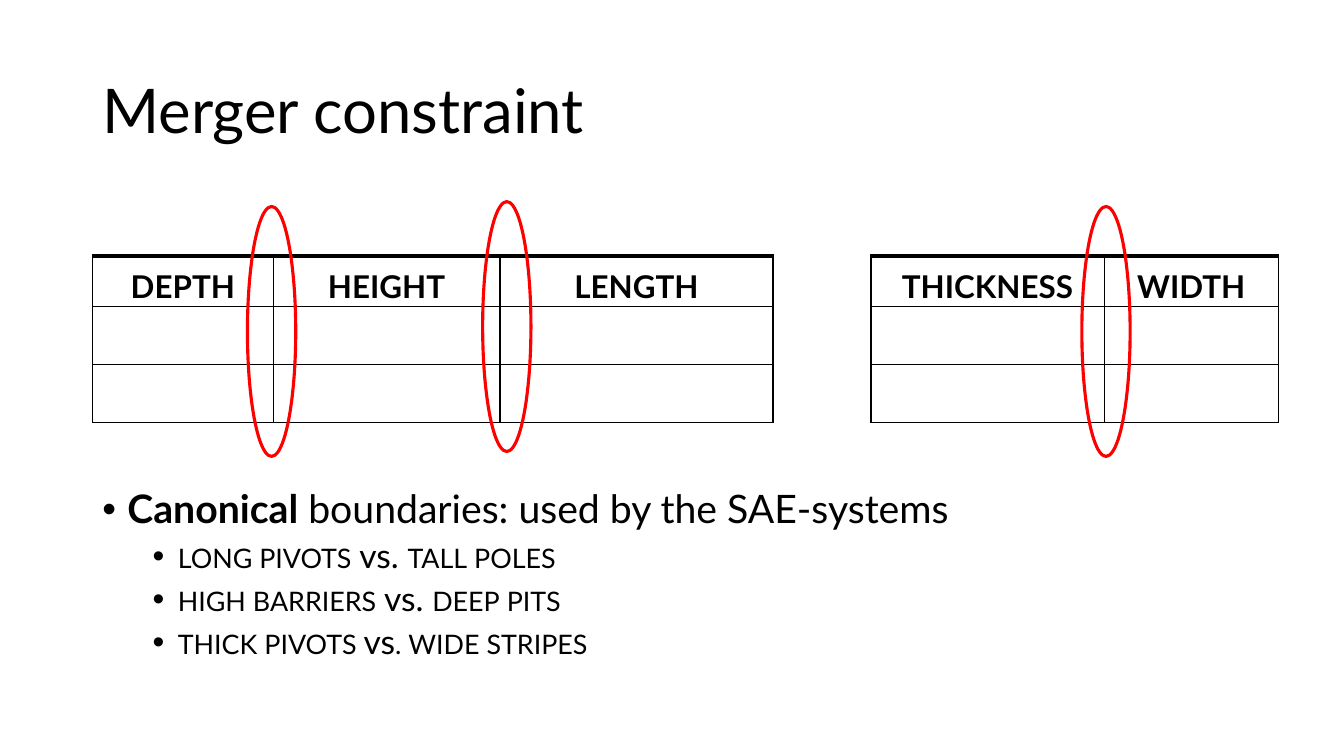
from lxml.etree import SubElement
from pptx import Presentation
from pptx.dml.color import RGBColor
from pptx.enum.shapes import MSO_SHAPE as Shape
from pptx.enum.text import MSO_ANCHOR as Anchor, PP_ALIGN as Align
from pptx.oxml import parse_xml
from pptx.oxml.ns import nsdecls, qn
from pptx.util import Pt

BLACK = RGBColor(0x00, 0x00, 0x00)
RED = RGBColor(0xFF, 0x00, 0x00)
FONT = "Lato"
RING_WIDTH, RING_HEIGHT = 34.5, 178.5
HEADER_HEIGHT, ROW_HEIGHT = 36, 41.4

# Each entry: level, then runs as (text, style)
BULLETS = [
    (0, [("Canonical", "bold"), (" boundaries: used by the SAE-systems", "")]),
    (1, [("long pivots", "small"), (" vs. ", ""), ("tall poles", "small")]),
    (1, [("high barriers", "small"), (" vs. ", ""), ("deep pits", "small")]),
    (1, [("thick pivots ", "small"), ("vs", ""), (". wide stripes", "small")]),
]


def set_font(paragraph, size):
    font = paragraph.font
    font.name, font.size = FONT, Pt(size)
    font.color.rgb = BLACK


def add_run(paragraph, text, style=""):
    run = paragraph.add_run()
    run.text = text
    if style == "bold":
        run.font.bold = True
    elif style == "small":
        run.font._element.set("cap", "small")


def add_text_frame(slide, left, top, width, height):
    box = slide.shapes.add_textbox(Pt(left), Pt(top), Pt(width), Pt(height))
    box.text_frame.word_wrap = True
    return box.text_frame


def add_title(slide, left, top, width, height):
    frame = add_text_frame(slide, left, top, width, height)
    frame.vertical_anchor = Anchor.MIDDLE
    paragraph = frame.paragraphs[0]
    paragraph.line_spacing = 0.9
    set_font(paragraph, 44)
    add_run(paragraph, "Merger constraint")


def set_borders(cell, top_width):
    properties = cell._tc.get_or_add_tcPr()
    widths = {"lnL": 1, "lnR": 1, "lnT": top_width, "lnB": 1}
    for position, (tag, width) in enumerate(widths.items()):
        properties.insert(position, parse_xml(
            f'<a:{tag} {nsdecls("a")} w="{Pt(width)}"><a:solidFill>'
            f'<a:srgbClr val="{BLACK}"/></a:solidFill></a:{tag}>'))


def add_dimension_table(slide, left, top, columns):
    """Place a header row of dimensions above two empty rows."""
    height = HEADER_HEIGHT + 2 * ROW_HEIGHT
    width = sum(columns.values())
    table = slide.shapes.add_table(
        3, len(columns), Pt(left), Pt(top), Pt(width), Pt(height)).table
    table.first_row = table.horz_banding = False
    for index, row in enumerate(table.rows):
        row.height = Pt(ROW_HEIGHT if index else HEADER_HEIGHT)
        for cell in row.cells:
            cell.fill.background()
            set_borders(cell, 1 if index else 3)

    # Header labels
    for index, (label, column_width) in enumerate(columns.items()):
        table.columns[index].width = Pt(column_width)
        cell = table.cell(0, index)
        cell.vertical_anchor = Anchor.MIDDLE
        cell.margin_left = cell.margin_right = Pt(5)
        cell.margin_top = cell.margin_bottom = 0
        paragraph = cell.text_frame.paragraphs[0]
        paragraph.alignment = Align.CENTER
        paragraph.line_spacing = 1.07
        set_font(paragraph, 28)
        paragraph.font.bold = True
        add_run(paragraph, label, "small")


def add_bullets(slide, left, top, width, height):
    frame = add_text_frame(slide, left, top, width, height)
    for index, (level, runs) in enumerate(BULLETS):
        paragraph = frame.add_paragraph() if index else frame.paragraphs[0]
        paragraph.level = level
        paragraph.line_spacing = 0.9
        paragraph.space_before = Pt(5 * level)
        properties = paragraph._p.get_or_add_pPr()
        properties.set("marL", str(Pt(18 + 36 * level)))
        properties.set("indent", str(Pt(-18)))
        SubElement(properties, qn("a:buFont")).set("typeface", "Arial")
        SubElement(properties, qn("a:buChar")).set("char", "•")
        set_font(paragraph, 24 if level else 28)
        for text, style in runs:
            add_run(paragraph, text, style)


def add_boundary_ring(slide, center, top):
    ring = slide.shapes.add_shape(
        Shape.OVAL, Pt(center - RING_WIDTH / 2), Pt(top),
        Pt(RING_WIDTH), Pt(RING_HEIGHT))
    ring.shadow.inherit = False
    ring.fill.background()
    ring.line.color.rgb = RED
    ring.line.width = Pt(2.25)


def main():
    presentation = Presentation()
    presentation.slide_width, presentation.slide_height = Pt(960), Pt(540)
    slide = presentation.slides.add_slide(presentation.slide_layouts[6])

    add_title(slide, 66, 28.8, 828, 104.4)
    add_dimension_table(slide, 66.2, 183,
                        {"depth": 129, "height": 162, "length": 195})
    add_dimension_table(slide, 622.2, 183, {"thickness": 166.5, "width": 124.5})
    add_bullets(slide, 66, 346.5, 828, 140)

    # Rings around the column boundaries
    for center, top in ((194, 147.5), (362, 144), (790, 147.5)):
        add_boundary_ring(slide, center, top)

    presentation.save("out.pptx")


if __name__ == "__main__":
    main()
